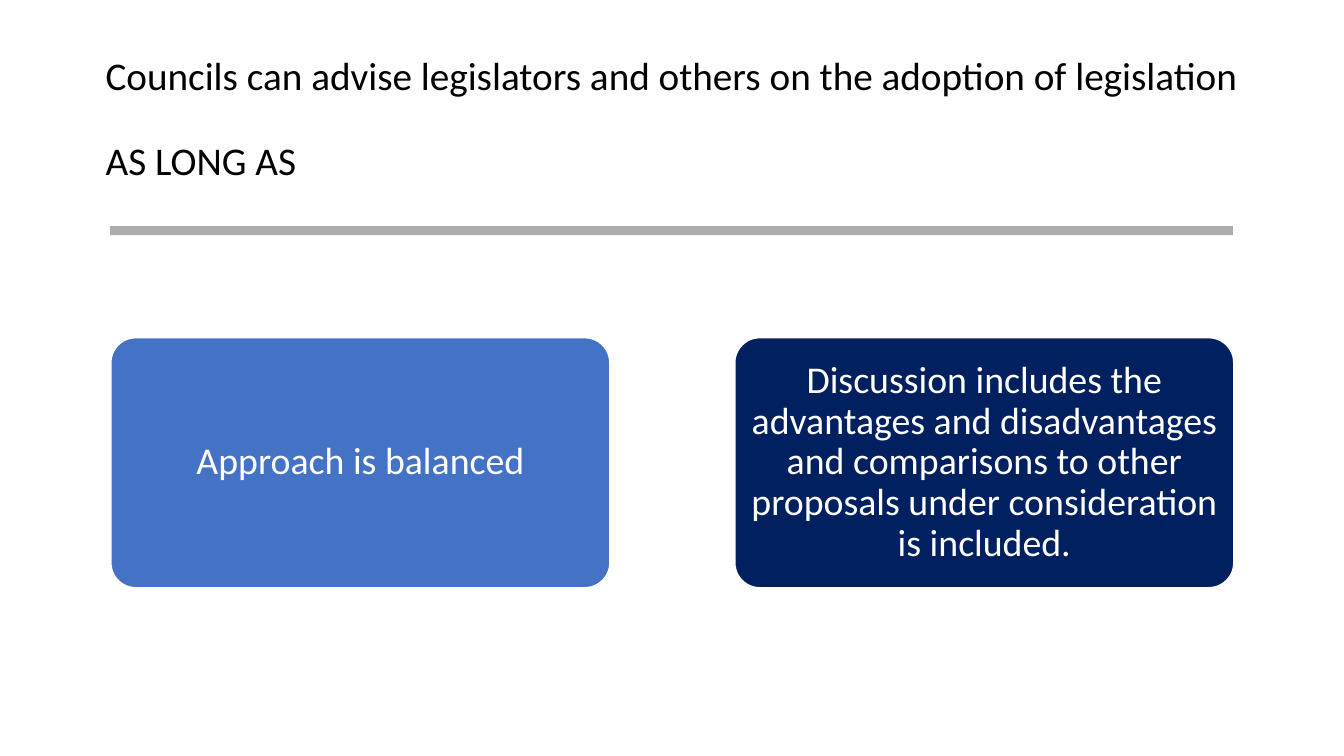
from lxml import etree
from pptx import Presentation
from pptx.dml.color import RGBColor
from pptx.enum import shapes, text
from pptx.oxml import ns
from pptx.util import Pt

BLACK = RGBColor(0, 0, 0)
WHITE = RGBColor(255, 255, 255)
GRAY = RGBColor(0x80, 0x80, 0x80)
BLUE = RGBColor(0x44, 0x72, 0xC4)
NAVY = RGBColor(0x00, 0x20, 0x60)


def add_run(para, words, size, color):
    para.line_spacing = 0.9
    run = para.add_run()
    run.text = words
    run.font.name = "Calibri"
    run.font.size = Pt(size)
    run.font.color.rgb = color


def add_box(kind, left, top, width, height, color):
    box = slide.shapes.add_shape(kind, Pt(left), Pt(top), Pt(width), Pt(height))
    box.shadow.inherit = False
    box.fill.solid()
    box.fill.fore_color.rgb = color
    return box


deck = Presentation()
deck.slide_width, deck.slide_height = Pt(960), Pt(540)
slide = deck.slides.add_slide(deck.slide_layouts[6])

# Title
title = slide.shapes.add_textbox(Pt(68.4), Pt(47.5), Pt(823), Pt(104.4))
frame = title.text_frame
frame.word_wrap = True
frame.vertical_anchor = text.MSO_ANCHOR.BOTTOM
frame.margin_top = frame.margin_right = 0
frame.margin_bottom = Pt(20.7)
head = frame.paragraphs[0]
add_run(head, "Councils can advise legislators and others on the adoption of legislation",
        28, BLACK)
tail = frame.add_paragraph()
tail.space_before = Pt(30.4)
add_run(tail, "AS LONG AS", 28, BLACK)

# Rule, partly see-through
rule = add_box(shapes.MSO_SHAPE.RECTANGLE, 78.7, 161.5, 802, 6.5, GRAY)
rule.line.fill.background()
tint = rule.fill._xPr.find(".//" + ns.qn("a:srgbClr"))
etree.SubElement(tint, ns.qn("a:alpha"), val="65000")

# Two conditions
cards = [
    ("Approach is balanced", BLUE),
    ("Discussion includes the advantages and disadvantages and comparisons "
     "to other proposals under consideration is included.", NAVY),
]
for i, (words, color) in enumerate(cards):
    card = add_box(shapes.MSO_SHAPE.ROUNDED_RECTANGLE,
                   79.2 + i * 445.7, 241.2, 356.4, 178.6, color)
    card.adjustments[0] = 0.1
    card.line.color.rgb = WHITE
    card.line.width = Pt(1)
    frame = card.text_frame
    frame.word_wrap = True
    frame.vertical_anchor = text.MSO_ANCHOR.MIDDLE
    frame.margin_left = frame.margin_right = Pt(4.3)
    frame.margin_top = frame.margin_bottom = Pt(2.9)
    para = frame.paragraphs[0]
    para.alignment = text.PP_ALIGN.CENTER
    add_run(para, words, 27, WHITE)

deck.save("out.pptx")
